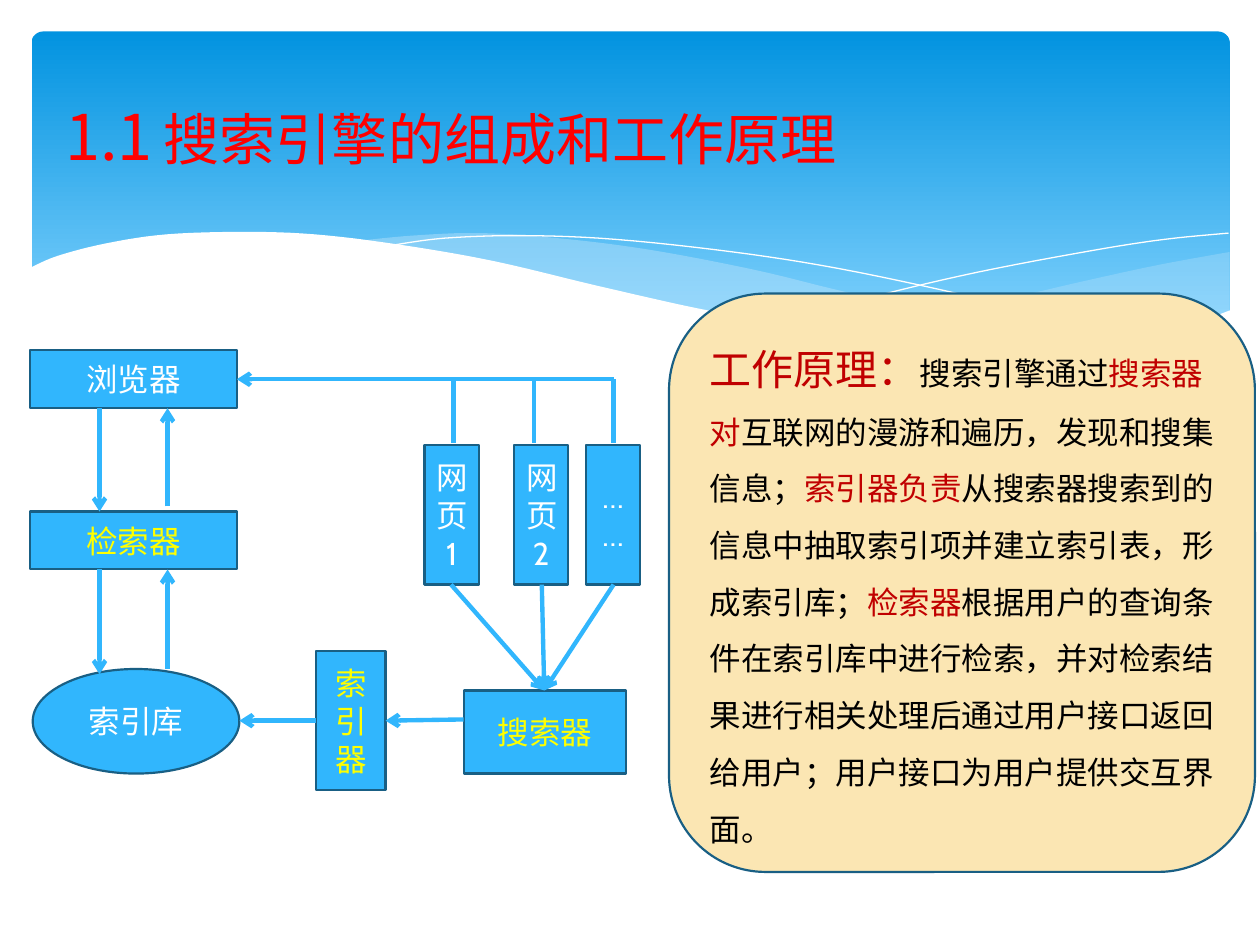
from dataclasses import dataclass
from lxml import etree
from pptx import Presentation
from pptx.dml.color import RGBColor
from pptx.enum.shapes import MSO_CONNECTOR, MSO_SHAPE
from pptx.enum.text import MSO_ANCHOR, MSO_AUTO_SIZE, PP_ALIGN
from pptx.oxml.ns import qn
from pptx.util import Inches, Pt

RECT, OVAL, ROUND = MSO_SHAPE.RECTANGLE, MSO_SHAPE.OVAL, MSO_SHAPE.ROUNDED_RECTANGLE
STRAIGHT = MSO_CONNECTOR.STRAIGHT
MIDDLE, NO_FIT = MSO_ANCHOR.MIDDLE, MSO_AUTO_SIZE.NONE
LEFT, CENTER = PP_ALIGN.LEFT, PP_ALIGN.CENTER

# The slide is a grid of 100 columns and 75 rows
COLS, ROWS, CELL = 100, 75, Inches(0.1)


@dataclass(frozen=True)
class Theme:
    sky_top: str = "0293E0"
    sky_bottom: str = "83D3FE"
    mist: str = "C6E7FC"
    white: str = "FFFFFF"
    black: str = "000000"
    box: str = "31B6FD"
    edge: str = "195F84"
    panel: str = "FBE6B3"
    title: str = "FF0000"
    accent: str = "C00000"
    yellow: str = "FFFF00"
    latin: str = "Cabin"
    cjk: str = "Noto Sans CJK SC"
    body: int = 18
    lead: int = 24
    edge_width: float = 1.25
    arrow_width: float = 2.5


T = Theme()


def rgb(value):
    return RGBColor.from_string(value)


def grid(*values):
    return [round(v * CELL) for v in values]


def add_run(p, text, size, color, font):
    r = p.add_run()
    r.text = text
    r.font.color.rgb = rgb(color)
    for name, value in {"size": Pt(size), "name": font}.items():
        setattr(r.font, name, value)
    etree.SubElement(r.font._element, qn("a:ea"), typeface=T.cjk)


def set_frame(tf):
    for name, value in {"word_wrap": True, "auto_size": NO_FIT,
                        "vertical_anchor": MIDDLE}.items():
        setattr(tf, name, value)
    return tf.paragraphs[0]


def add_box(s, kind, at, fill, edge=T.edge):
    sp = s.shapes.add_shape(kind, *grid(*at))
    sp.shadow.inherit = False
    sp.fill.solid()
    sp.fill.fore_color.rgb = rgb(fill)
    if edge:
        sp.line.color.rgb = rgb(edge)
        sp.line.width = Pt(T.edge_width)
    else:
        sp.line.fill.background()
    return sp


def smooth(knots, steps=6):
    """Catmull-Rom curve through the knots."""
    ends = [knots[0], *knots, knots[-1]]
    curve = [knots[0]]
    for a, b, c, d in zip(ends, ends[1:], ends[2:], ends[3:]):
        for i in range(1, steps + 1):
            t = i / steps
            curve.append(tuple(
                (2 * q + (r - p) * t + (2 * p - 5 * q + 4 * r - u) * t ** 2
                 + (3 * q - p - 3 * r + u) * t ** 3) / 2
                for p, q, r, u in zip(a, b, c, d)))
    return curve


def add_wave(s, box, points, fill=None, opacity=100):
    """A filled wave, or a white hairline when there is no fill."""
    x, y = box[:2]
    first, *rest = [grid(x + px, y + py) for px, py in points]
    fb = s.shapes.build_freeform(*first)
    fb.add_line_segments(rest, close=bool(fill))
    sp = fb.convert_to_shape()
    sp.shadow.inherit = False
    if not fill:
        sp.fill.background()
        sp.line.color.rgb = rgb(T.white)
        sp.line.width = Pt(0)
        return
    sp.line.fill.background()
    sp.fill.solid()
    sp.fill.fore_color.rgb = rgb(fill)
    if opacity < 100:
        color = sp._element.spPr.find(qn("a:solidFill"))[0]
        etree.SubElement(color, qn("a:alpha"), val=str(opacity * 1000))


def add_banner(s, box):
    x, y, w, h = box
    sky = add_box(s, ROUND, box, T.sky_top, edge=None)
    sky.adjustments[0] = 0.034
    sky.fill.gradient()
    sky.fill.gradient_angle = 270
    stops = ((0, T.sky_top), (0.9, T.sky_bottom))
    for stop, (position, color) in zip(sky.fill.gradient_stops, stops):
        stop.position = position
        stop.color.rgb = rgb(color)

    # Translucent waves, each from an upper and a lower curve
    waves = (x - 0.2, y + 15.9)
    right = (smooth([(95.3, 1.6), (89.8, 2.6), (83.8, 3.9), (75.6, 5.8), (68.3, 7.3), (63.8, 8.1)])
             + smooth([(63.8, 8.1), (69.6, 8.8), (75.8, 9.3), (80.1, 9.3), (85.8, 8.9),
                       (91.2, 7.8), (95.3, 6.3)]))
    middle = (smooth([(26.3, 0.7), (30.5, 0.3), (35.7, 0.1), (41.9, 0.5), (49.1, 1.4),
                      (57.5, 3), (64.5, 4.7), (71.8, 6.3), (78.4, 7.6), (87, 8.9)])
              + smooth([(87, 8.9), (81.5, 9.4), (75, 9.3), (67.2, 8.6), (59.5, 7.4),
                        (50.7, 5.6), (42.6, 3.8), (33.9, 1.9), (26.3, 0.7)]))
    add_wave(s, waves, right, T.mist, 29)
    add_wave(s, waves, middle, T.mist, 40)

    # Hairlines
    add_wave(s, waves, smooth([(28.6, 1.1), (33, 0.5), (39.3, 0.3), (46.6, 0.6), (55.9, 1.6),
                               (64.2, 2.9), (73.7, 4.9), (80.8, 6.7), (88.4, 8.8)]))
    add_wave(s, waves, smooth([(59, 7.3), (67.2, 5.1), (75.3, 3.2), (84.3, 1.5),
                               (90.1, 0.6), (95.2, 0.1)]))

    # White front wave
    crest = smooth([(0, 2.9), (2.3, 1.9), (6.2, 0.9), (10.9, 0.2), (17, 0), (22.7, 0.2),
                    (29.3, 1), (36.8, 2.3), (45.2, 4.3), (53.2, 6.1), (60.3, 7.4), (66.5, 8.4),
                    (73.8, 9.1), (80, 9.3), (85.2, 8.9), (89.7, 8.1), (92.7, 7.2), (95.4, 6.2)])
    add_wave(s, waves, crest + [(95.4, 14.5), (0, 14.5)], T.white)


def add_title(s, box):
    sp = s.shapes.title
    sp.left, sp.top, sp.width, sp.height = grid(*box)
    p = set_frame(sp.text_frame)
    p.alignment = LEFT
    for text, size in (("1.1", 36), (" ", 28), ("搜索引擎的组成和工作原理", 32)):
        add_run(p, text, size, T.title, T.cjk)
    sp.element.getparent().append(sp.element)  # in front of the banner


def add_diagram(s, box):
    x, y = box[:2]

    def node(text, at, color=T.white, kind=RECT):
        sp = add_box(s, kind, (x + at[0], y + at[1], *at[2:]), T.box)
        p = set_frame(sp.text_frame)
        p.alignment = CENTER
        add_run(p, text, T.body, color, T.latin if color == T.white else T.cjk)

    def link(x1, y1, x2, y2, arrow=True):
        line = s.shapes.add_connector(STRAIGHT, *grid(x + x1, y + y1, x + x2, y + y2))
        line.line.color.rgb = rgb(T.box)
        line.line.width = Pt(T.arrow_width)
        if arrow:
            etree.SubElement(line.line._get_or_add_ln(), qn("a:tailEnd"), type="arrow")
        etree.SubElement(line._element.spPr, qn("a:effectLst"))

    # User side
    node("浏览器", (0, 0, 16.4, 4.6))
    node("检索器", (0, 12.8, 16.4, 4.6), T.yellow)
    node("索引库", (0.2, 25.3, 16.4, 8.3), kind=OVAL)
    for top, bottom in ((4.6, 12.8), (17.4, 25.7)):
        link(5.5, top, 5.5, bottom)
        link(10.9, bottom - 0.4, 10.9, top)

    # Indexing
    node("索引器", (22.7, 23.9, 5.5, 11), T.yellow)
    node("搜索器", (34.4, 27, 12.9, 6.6), T.yellow)
    link(22.7, 29.4, 16.6, 29.4)
    link(34.4, 29.3, 28.2, 29.4)

    # Web pages, joined to the browser above and the searcher below
    link(46.3, 2.3, 16.4, 2.3)
    pages = (("网页1", 31.3, 33.6, 33.4), ("网页2", 38.4, 40, 40.6), ("……", 44.1, 46.3, 46.3))
    for text, left, drop, foot in pages:
        link(drop, 2.3, drop, 7.4, arrow=False)
        node(text, (left, 7.5, 4.3, 11.1))
        link(foot, 18.6, 40.8, 27)


def add_panel(s, box):
    p = set_frame(add_box(s, ROUND, box, T.panel).text_frame)
    p.alignment = LEFT
    p.line_spacing = 1.5
    add_run(p, "工作原理：", T.lead, T.accent, T.latin)
    for text, color in (
            ("搜索引擎通过", T.black), ("搜索器对", T.accent),
            ("互联网的漫游和遍历，发现和搜集信息；", T.black), ("索引器负责", T.accent),
            ("从搜索器搜索到的信息中抽取索引项并建立索引表，形成索引库；", T.black),
            ("检索器", T.accent),
            ("根据用户的查询条件在索引库中进行检索，并对检索结果进行相关处理后"
             "通过用户接口返回给用户；用户接口为用户提供交互界面。", T.black)):
        add_run(p, text, T.body, color, T.latin)


def main():
    prs = Presentation()
    prs.slide_width, prs.slide_height = grid(COLS, ROWS)
    s = prs.slides.add_slide(prs.slide_layouts[5])
    add_banner(s, (2.5, 2.5, 95.1, 27))
    add_title(s, (4.2, 6, 90, 9.4))
    add_diagram(s, (2.4, 27.8, 48.4, 34.9))
    add_panel(s, (53.1, 23.3, 46.5, 45.9))
    prs.save("out.pptx")


if __name__ == "__main__":
    main()
